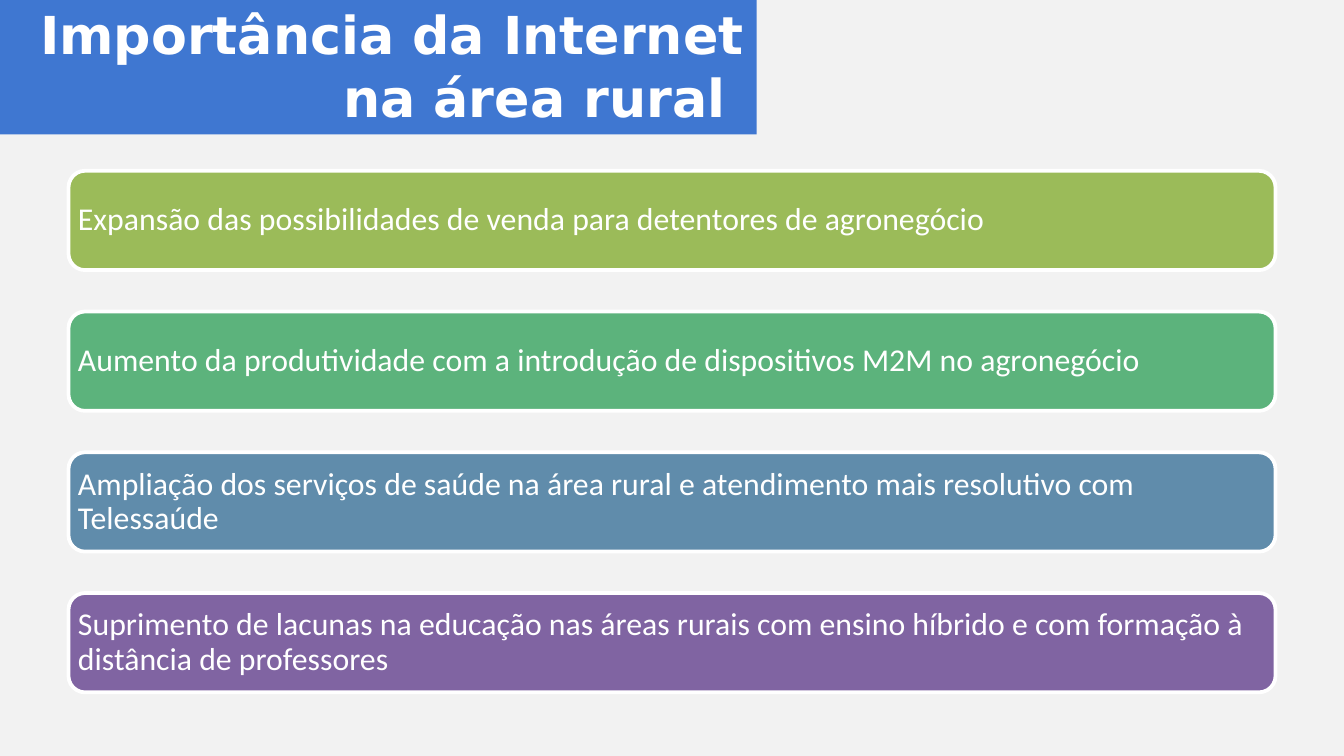
import pptx
import pptx.util
import pptx.dml.color
import pptx.enum.shapes
import pptx.enum.text

Pt = pptx.util.Pt
COLOURS = {
    "background": "F2F2F2",
    "banner": "3F77D1",
    "text": "FFFFFF",
    "sales": "9BBB59",
    "productivity": "5CB37C",
    "health": "608CAB",
    "education": "8064A2",
}
BENEFITS = [
    ("sales", "Expansão das possibilidades de venda para detentores de agronegócio"),
    ("productivity", "Aumento da produtividade com a introdução de dispositivos M2M no agronegócio"),
    ("health", "Ampliação dos serviços de saúde na área rural e atendimento mais resolutivo com Telessaúde"),
    ("education", "Suprimento de lacunas na educação nas áreas rurais com ensino híbrido"
                  " e com formação à distância de professores"),
]
BAR_LEFT, BAR_TOP, BAR_WIDTH, BAR_HEIGHT, BAR_PITCH = 36.7, 91.5, 646.6, 53.2, 75.4


class RuralInternetSlide:
    """Holds the style and the current slide, and adds its elements."""

    def __init__(self, presentation):
        self.slide = presentation.slides.add_slide(presentation.slide_layouts[5])
        self.paint(self.slide.background.fill, "background")

    def paint(self, fill, colour):
        fill.solid()
        fill.fore_color.rgb = pptx.dml.color.RGBColor.from_string(COLOURS[colour])

    def add_text(self, paragraph, text, font_name, size, bold=False):
        run = paragraph.add_run()
        run.text = text
        run.font.name = font_name
        run.font.size = Pt(size)
        run.font.bold = bold
        run.font.color.rgb = pptx.dml.color.RGBColor.from_string(COLOURS["text"])

    def title(self, text, left, top, width, height):
        banner = self.slide.shapes.title
        banner.left, banner.top = Pt(left), Pt(top)
        banner.width, banner.height = Pt(width), Pt(height)
        self.paint(banner.fill, "banner")
        frame = banner.text_frame
        frame.word_wrap = True
        frame.auto_size = pptx.enum.text.MSO_AUTO_SIZE.NONE
        frame.vertical_anchor = pptx.enum.text.MSO_ANCHOR.BOTTOM
        heading = frame.paragraphs[0]
        heading.alignment = pptx.enum.text.PP_ALIGN.RIGHT
        self.add_text(heading, text, "DejaVu Sans", 28, bold=True)

    def bar(self, text, colour, left, top, width, height):
        bar = self.slide.shapes.add_shape(
            pptx.enum.shapes.MSO_SHAPE.ROUNDED_RECTANGLE,
            Pt(left), Pt(top), Pt(width), Pt(height))
        bar.shadow.inherit = False
        self.paint(bar.fill, colour)
        self.paint(bar.line.fill, "text")
        bar.line.width = Pt(2)
        frame = bar.text_frame
        frame.word_wrap = True
        frame.vertical_anchor = pptx.enum.text.MSO_ANCHOR.MIDDLE
        frame.margin_left = frame.margin_right = Pt(2.5)
        frame.margin_top = frame.margin_bottom = Pt(2.5)
        benefit = frame.paragraphs[0]
        benefit.alignment = pptx.enum.text.PP_ALIGN.LEFT
        benefit.line_spacing = 0.9
        self.add_text(benefit, text, "Calibri", 17)


def main():
    """Build the slide and save it."""
    presentation = pptx.Presentation()
    presentation.slide_width, presentation.slide_height = Pt(720), Pt(405)
    page = RuralInternetSlide(presentation)
    page.title("Importância da Internet na área rural ", 0, 0, 405.4, 72)
    for row, (colour, benefit) in enumerate(BENEFITS):
        page.bar(benefit, colour, BAR_LEFT, BAR_TOP + row * BAR_PITCH, BAR_WIDTH, BAR_HEIGHT)
    presentation.save("out.pptx")


if __name__ == "__main__":
    main()
